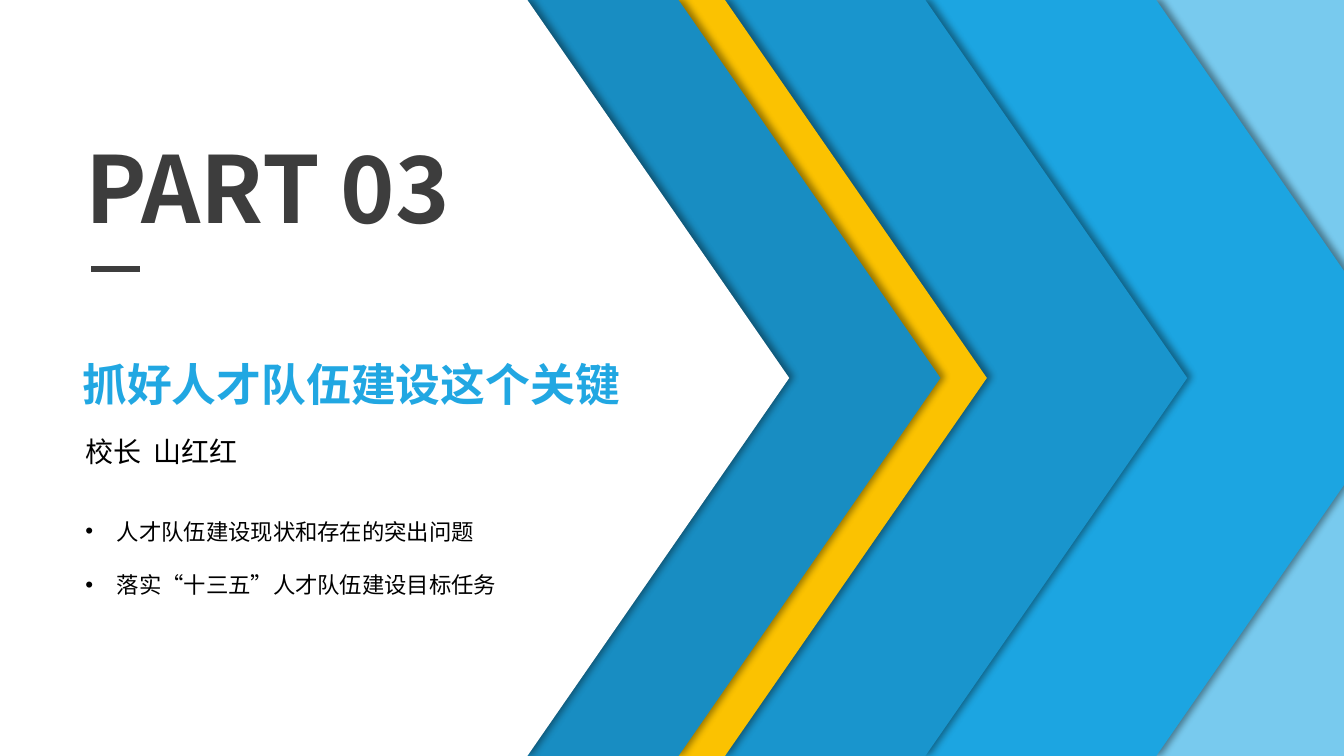
from dataclasses import dataclass

from lxml.etree import SubElement as Sub
from pptx import Presentation
from pptx.dml.color import RGBColor as RGB
from pptx.enum.shapes import MSO_CONNECTOR as Link
from pptx.enum.text import MSO_ANCHOR as Anchor, MSO_AUTO_SIZE as Auto, PP_ALIGN as Align
from pptx.oxml.ns import qn
from pptx.util import Cm, Pt


@dataclass(frozen=True)
class Theme:
    font: str = "Noto Sans CJK SC"
    back: str = "78CAEE"
    sky: str = "1CA5E1"
    blue: str = "1995CD"
    gold: str = "FBC201"
    deep: str = "188DC2"
    white: str = "FFFFFF"
    dark: str = "3D3D3D"
    head: str = "21A7E2"
    black: str = "000000"
    part_size: int = 66
    head_size: int = 32
    name_size: int = 20
    list_size: int = 16


class Deck:
    def __init__(self, theme, wide, high):
        self.theme, self.high = theme, high
        self.file = Presentation()
        self.file.slide_width, self.file.slide_height = Cm(wide), Cm(high)
        self.slide = self.file.slides.add_slide(self.file.slide_layouts[1])
        self.shapes = self.slide.shapes
        fill = self.slide.background.fill
        fill.solid()
        fill.fore_color.rgb = RGB.from_string(theme.back)

    def arrow(self, tip, color):
        """Full-height pointer with its tip at the given x."""
        left, neck = tip - 19.89, tip - 6.6
        spots = [(neck, 0), (tip, self.high / 2), (neck, self.high), (left, self.high)]
        form = self.shapes.build_freeform(Cm(left), Cm(0))
        form.add_line_segments([(Cm(x), Cm(y)) for x, y in spots], close=True)
        shape = form.convert_to_shape()
        shape.fill.solid()
        shape.fill.fore_color.rgb = RGB.from_string(color)
        shape.line.fill.background()
        self.shade(shape)

    def shade(self, shape):
        shape.shadow.inherit = False
        effects = shape._element.spPr.find(qn("a:effectLst"))
        outer = Sub(effects, qn("a:outerShdw"), blurRad=str(Pt(5)), dist=str(Pt(4)),
                    dir="0", algn="l", rotWithShape="0")
        color = Sub(outer, qn("a:srgbClr"), val=self.theme.black)
        Sub(color, qn("a:alpha"), val="40000")

    def rule(self, x, y, wide, color, weight):
        line = self.shapes.add_connector(Link.STRAIGHT, Cm(x), Cm(y), Cm(x + wide), Cm(y))
        line.line.color.rgb = RGB.from_string(color)
        line.line.width = Pt(weight)
        Sub(line._element.spPr, qn("a:effectLst"))

    def style(self, shape, lines, size, color, bold=False, wrap=True):
        frame = shape.text_frame
        frame.text = "\n".join(lines)
        frame.word_wrap = wrap
        frame.auto_size = Auto.NONE
        frame.vertical_anchor = Anchor.TOP
        for para in frame.paragraphs:
            para.alignment = Align.LEFT
            para.space_before = Pt(0)
            font = para.font
            font.name, font.size, font.bold = self.theme.font, Pt(size), bold
            font.color.rgb = RGB.from_string(color)
            Sub(font._element, qn("a:ea"), typeface=self.theme.font)

    def text(self, box, line, size, color, bold=False):
        shape = self.shapes.add_textbox(*map(Cm, box))
        self.style(shape, [line], size, color, bold)

    def place(self, shape, box):
        """Move a placeholder into its box, in front of the arrows."""
        shape.left, shape.top, shape.width, shape.height = map(Cm, box)
        self.shapes._spTree.append(shape._element)

    def title(self, box, line, size, color):
        shape = self.shapes.title
        self.place(shape, box)
        self.style(shape, [line], size, color, bold=True, wrap=False)

    def bullets(self, box, lines, size, color):
        shape = self.slide.placeholders[1]
        self.place(shape, box)
        self.style(shape, lines, size, color, wrap=False)
        for para in shape.text_frame.paragraphs:
            para.line_spacing = 2.0
            props = para._p.get_or_add_pPr()
            props.set("marL", str(Cm(0.79)))
            props.set("indent", str(-Cm(0.79)))
            mark = Sub(props, qn("a:buChar"), char="•")
            props.find(qn("a:defRPr")).addprevious(mark)

    def save(self):
        self.file.save("out.pptx")


def main():
    theme = Theme()
    deck = Deck(theme, 33.87, 19.05)

    # Layered arrows, back to front
    tips = [35.74, 29.92, 24.87, 23.7, 19.89]
    colors = [theme.sky, theme.blue, theme.gold, theme.deep, theme.white]
    for tip, color in zip(tips, colors):
        deck.arrow(tip, color)

    # Part number and rule
    deck.text((1.9, 3.18, 10.54, 3.07), "PART 03", theme.part_size, theme.dark, bold=True)
    deck.rule(2.3, 6.78, 1.23, theme.dark, 4.5)

    # Heading, speaker and topics
    deck.title((1.82, 8.86, 14.2, 1.63), "抓好人才队伍建设这个关键",
               theme.head_size, theme.head)
    deck.text((1.9, 10.82, 6.15, 1.12), "校长  山红红", theme.name_size, theme.black)
    deck.bullets((1.9, 12.24, 11, 3), ["人才队伍建设现状和存在的突出问题",
                                       "落实“十三五”人才队伍建设目标任务"],
                 theme.list_size, theme.black)
    deck.save()


if __name__ == "__main__":
    main()
